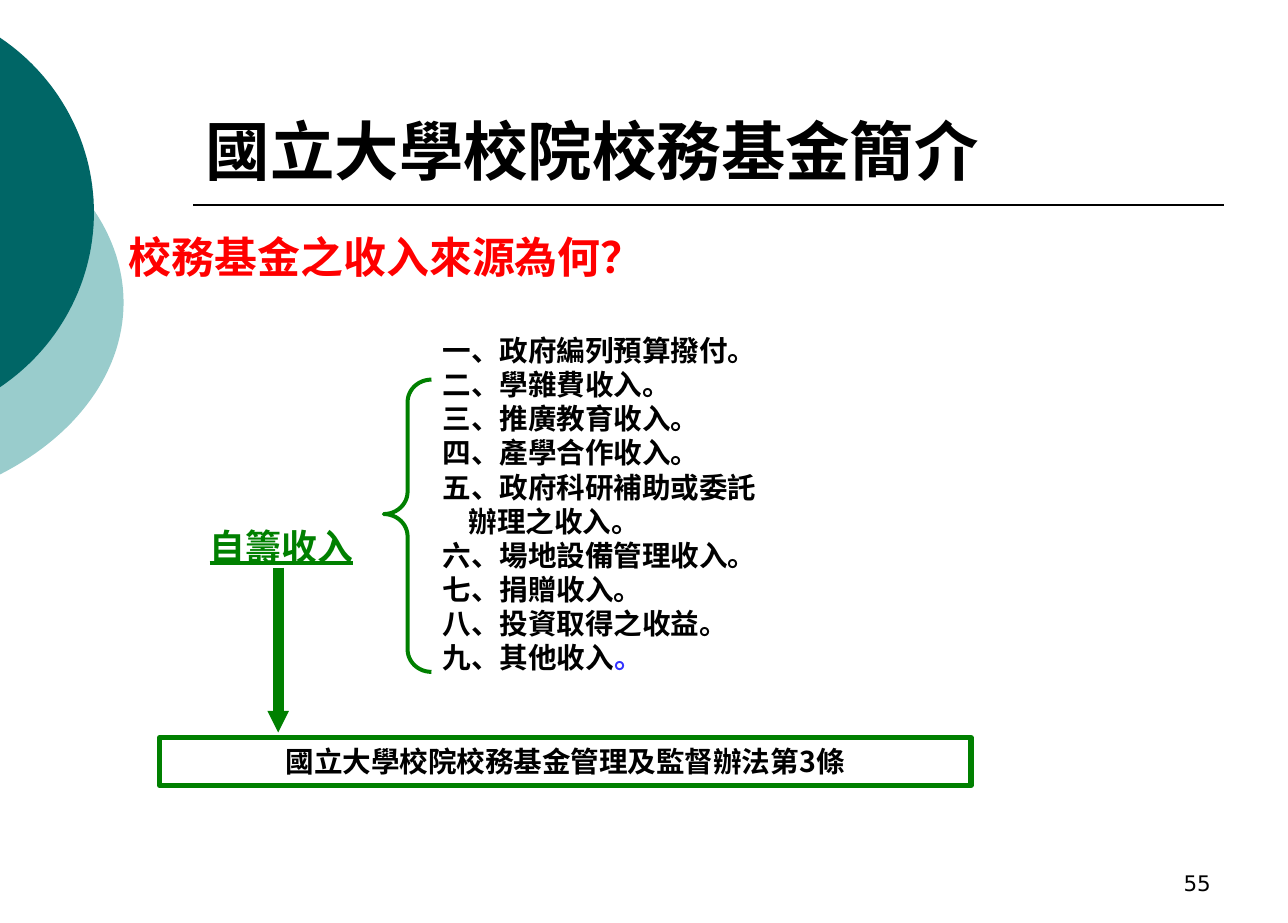
from math import acos, cos, sin

from lxml.etree import SubElement
from pptx import Presentation
from pptx.dml.color import RGBColor
from pptx.enum.shapes import MSO_CONNECTOR as Connector, MSO_SHAPE as Shape
from pptx.enum.text import MSO_ANCHOR as Anchor, PP_ALIGN as Align
from pptx.oxml.ns import qn
from pptx.util import Inches, Pt

WIDTH, HEIGHT = Inches(10), Inches(7.17)

BLACK = RGBColor(0x00, 0x00, 0x00)
RED = RGBColor(0xFF, 0x00, 0x00)
GREEN = RGBColor(0x00, 0x80, 0x00)
BLUE = RGBColor(0x33, 0x33, 0xFF)
TEAL = RGBColor(0x00, 0x66, 0x66)
PALE_TEAL = RGBColor(0x99, 0xCC, 0xCC)

CJK = "Noto Sans CJK SC"
BODY_FONT = {"name": CJK, "size": Pt(16), "bold": True}
TITLE_FONT = {"name": "Arial", "size": Pt(36), "bold": True}
QUESTION_FONT = {"name": "DejaVu Sans", "size": Pt(24), "bold": True}
LABEL_FONT = {"name": "Arial Narrow", "size": Pt(20), "bold": True, "underline": True}
NUMBER_FONT = {"name": "DejaVu Sans", "size": Pt(12)}

LIST_LINE = Pt(19.1)
CONTINUATION = "辦理之收入。"
INCOME_SOURCES = [
    "一、政府編列預算撥付。",
    "二、學雜費收入。",
    "三、推廣教育收入。",
    "四、產學合作收入。",
    "五、政府科研補助或委託",
    CONTINUATION,
    "六、場地設備管理收入。",
    "七、捐贈收入。",
    "八、投資取得之收益。",
    "九、其他收入",
]


def across(percent):
    return round(WIDTH * percent / 100)


def down(percent):
    return round(HEIGHT * percent / 100)


def area(left, top, width, height):
    """Turn percentages of the slide into a position and a size."""
    return across(left), down(top), across(width), down(height)


def set_all(target, values):
    for name, value in values.items():
        setattr(target, name, value)


def add_run(paragraph, text, font, color):
    run = paragraph.add_run()
    run.text = text
    set_all(run.font, font)
    run.font.color.rgb = color
    SubElement(run.font._element, qn("a:ea")).set("typeface", font["name"])


def add_text(slide, place, lines, font, color, align=Align.LEFT, **frame_format):
    """Add a wrapped text box with one paragraph a line; return its paragraphs."""
    frame = slide.shapes.add_textbox(*area(*place)).text_frame
    set_all(frame, {"word_wrap": True, **frame_format})
    for number, line in enumerate(lines):
        paragraph = frame.add_paragraph() if number else frame.paragraphs[0]
        paragraph.alignment = align
        add_run(paragraph, line, font, color)
    return frame.paragraphs


def add_edge_ellipse(slide, place, color, steps=60):
    """Draw the part of an ellipse that lies right of the slide's left edge."""
    left, top, width, height = area(*place)
    radius_x, radius_y = width / 2, height / 2
    center_x, center_y = left + radius_x, top + radius_y
    limit = acos(-center_x / radius_x)
    angles = [limit * (2 * step / steps - 1) for step in range(steps + 1)]
    points = [(max(0, round(center_x + radius_x * cos(angle))),
               round(center_y + radius_y * sin(angle))) for angle in angles]
    builder = slide.shapes.build_freeform(*points[0])
    builder.add_line_segments(points[1:], close=True)
    ellipse = builder.convert_to_shape()
    ellipse.shadow.inherit = False
    ellipse.fill.solid()
    ellipse.fill.fore_color.rgb = color
    ellipse.line.fill.background()


def add_outline(slide, preset, place, weight):
    outline = slide.shapes.add_shape(preset, *area(*place))
    outline.shadow.inherit = False
    outline.fill.background()
    outline.line.color.rgb = GREEN
    outline.line.width = Pt(weight)
    return outline


def add_line(slide, start, end, color, weight, arrow=False):
    line = slide.shapes.add_connector(
        Connector.STRAIGHT, across(start[0]), down(start[1]), across(end[0]), down(end[1]))
    line.line.color.rgb = color
    line.line.width = Pt(weight)
    if arrow:
        tail = SubElement(line.line._get_or_add_ln(), qn("a:tailEnd"))
        for name, value in {"type": "triangle", "w": "sm", "len": "sm"}.items():
            tail.set(name, value)
    SubElement(line._element.spPr, qn("a:effectLst"))


def add_income_list(slide):
    paragraphs = add_text(slide, (33.4, 35.4, 41.7, 38.91), INCOME_SOURCES, BODY_FONT, BLACK)
    for paragraph, source in zip(paragraphs, INCOME_SOURCES):
        paragraph.line_spacing = LIST_LINE
        if source == CONTINUATION:
            paragraph._p.get_or_add_pPr().set("marL", str(across(2)))
    add_run(paragraphs[-1], "。", BODY_FONT, BLUE)


def add_regulation(slide):
    regulation = add_outline(slide, Shape.RECTANGLE, (12.4, 79.92, 63, 5.16), 3)
    frame = regulation.text_frame
    set_all(frame, {"word_wrap": True, "vertical_anchor": Anchor.MIDDLE,
                    "margin_top": 0, "margin_bottom": 0})
    frame.paragraphs[0].alignment = Align.CENTER
    add_run(frame.paragraphs[0], "國立大學校院校務基金管理及監督辦法第3條", BODY_FONT, BLACK)


def main():
    deck = Presentation()
    set_all(deck, {"slide_width": WIDTH, "slide_height": HEIGHT})
    slide = deck.slides.add_slide(deck.slide_layouts[6])

    add_edge_ellipse(slide, (-35.4, 10.04, 45, 45.47), PALE_TEAL)
    add_edge_ellipse(slide, (-26.5, 0, 33.8, 46.03), TEAL)
    add_line(slide, (15, 22.18), (95, 22.18), BLACK, 1)

    add_text(slide, (71.7, 91.07, 23.3, 6.69), ["55"], NUMBER_FONT, BLACK,
             Align.RIGHT, vertical_anchor=Anchor.BOTTOM)
    add_text(slide, (15, 4.46, 80, 16.6), ["國立大學校院校務基金簡介"], TITLE_FONT, BLACK,
             vertical_anchor=Anchor.BOTTOM)
    add_text(slide, (9, 24.27, 80.4, 60.81), ["校務基金之收入來源為何？"], QUESTION_FONT, RED)

    add_income_list(slide)
    brace = add_outline(slide, Shape.LEFT_BRACE, (29.8, 41.14, 3.7, 31.66), 2.25)
    brace.adjustments[0], brace.adjustments[1] = 0.47, 0.46

    add_text(slide, (15.3, 56.21, 13.4, 6), ["自籌收入"], LABEL_FONT, GREEN)
    add_line(slide, (21.6, 61.51), (21.6, 79.36), GREEN, 6, arrow=True)
    add_regulation(slide)

    deck.save("out.pptx")


if __name__ == "__main__":
    main()
